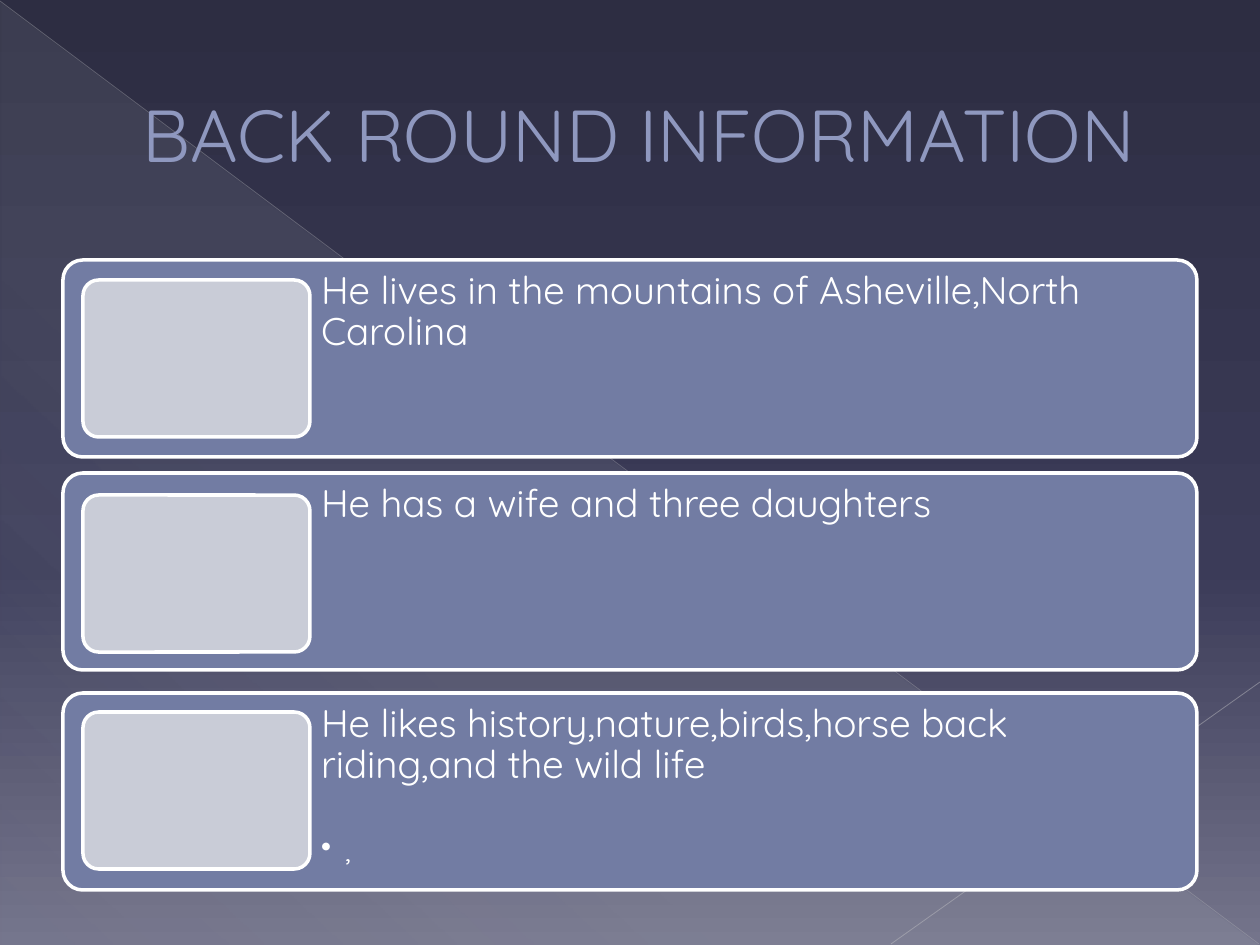
from lxml import etree
from pptx import Presentation
from pptx.dml.color import RGBColor
from pptx.enum.shapes import MSO_CONNECTOR, MSO_SHAPE
from pptx.enum.text import MSO_ANCHOR, PP_ALIGN
from pptx.oxml import parse_xml
from pptx.oxml.ns import nsdecls, qn
from pptx.util import Pt

PX = 914400 / 126
FONT = "Quicksand"
WHITE = RGBColor(0xFF, 0xFF, 0xFF)
TITLE = RGBColor(0x8F, 0x98, 0xBF)
TITLE_EDGE = RGBColor(0x4F, 0x56, 0x71)
CARD = RGBColor(0x72, 0x7C, 0xA3)
PANEL = RGBColor(0xC9, 0xCC, 0xD7)
RAY_LONG = RGBColor(0xB8, 0xB8, 0xBC)
RAY_SHORT = RGBColor(0xC0, 0xC0, 0xC4)
NIGHT, DUSK, HAZE = (RGBColor.from_string(c) for c in ("2D2D42", "3B3B58", "74748B"))
GLOW = RGBColor(0xDD, 0xE9, 0xEC)

# Card top, panel top, text, bulleted text
CARDS = [
    (260, 280, "He lives in the mountains of Asheville,North Carolina", None),
    (473, 495, "He has a wife and three daughters", None),
    (693, 712, "He likes history,nature,birds,horse back riding,and the wild life", ","),
]


def px(*lengths):
    return [round(n * PX) for n in lengths]


def gradient(stops, angle):
    """Gradient fill from (position %, colour, opacity %) stops."""
    gs = "".join(
        f'<a:gs pos="{pos * 1000}"><a:srgbClr val="{color}">'
        f'<a:alpha val="{alpha * 1000}"/></a:srgbClr></a:gs>'
        for pos, color, alpha in stops)
    return parse_xml(f'<a:gradFill {nsdecls("a")} rotWithShape="1"><a:gsLst>{gs}</a:gsLst>'
                     f'<a:lin ang="{angle * 60000}" scaled="0"/></a:gradFill>')


def replace_gradient(fill, parent, stops, angle):
    fill.gradient()
    old = parent.find(qn("a:gradFill"))
    parent.replace(old, gradient(stops, angle))


def add_ray(s, ends, color, width, alpha):
    line = s.shapes.add_connector(MSO_CONNECTOR.STRAIGHT, *px(*ends))
    line.line.color.rgb = color
    line.line.width = Pt(width)
    sp_pr = line.element.spPr
    clr = sp_pr.find(".//" + qn("a:srgbClr"))
    etree.SubElement(clr, qn("a:alpha")).set("val", str(alpha * 1000))
    etree.SubElement(sp_pr, qn("a:effectLst"))


def add_backdrop(s):
    fill = s.background.fill
    fill.gradient()
    bg_pr = s.element.find(".//" + qn("p:bgPr"))
    replace_gradient(fill, bg_pr, [(0, NIGHT, 100), (60, DUSK, 100), (100, HAZE, 100)], 90)

    glow = s.shapes.add_shape(MSO_SHAPE.RIGHT_TRIANGLE, *px(1, 2, 1258, 943))
    glow.shadow.inherit = False
    glow.line.fill.background()
    replace_gradient(glow.fill, glow.element.spPr,
                     [(0, GLOW, 10), (70, GLOW, 8), (100, GLOW, 1)], 133)
    add_ray(s, (0, 1, 1259, 944), RAY_LONG, 0.39, 35)
    add_ray(s, (1260, 682, 891, 944), RAY_SHORT, 0.47, 45)


def set_title(s, text):
    title = s.shapes.title
    title.left, title.top, title.width, title.height = px(63, 37, 1134, 193)
    s.shapes.element.append(title.element)  # in front of the backdrop
    tf = title.text_frame
    tf.text = text
    tf.vertical_anchor = MSO_ANCHOR.MIDDLE
    p = tf.paragraphs[0]
    p.alignment = PP_ALIGN.LEFT
    p._p.get_or_add_pPr().set("marL", str(px(67)[0]))
    r = p.runs[0]
    r.font.name, r.font.size = FONT, Pt(42)
    r.font.color.rgb = TITLE
    r._r.get_or_add_rPr().insert(0, parse_xml(
        f'<a:ln {nsdecls("a")} w="{Pt(0.5)}"><a:solidFill>'
        f'<a:srgbClr val="{TITLE_EDGE}"/></a:solidFill></a:ln>'))


def add_rounded(s, box, color):
    sp = s.shapes.add_shape(MSO_SHAPE.ROUNDED_RECTANGLE, *px(*box))
    sp.adjustments[0] = 0.1
    sp.shadow.inherit = False
    sp.fill.solid()
    sp.fill.fore_color.rgb = color
    sp.line.color.rgb = WHITE
    sp.line.width = Pt(2)


def style_paragraph(p, size):
    p.font.name, p.font.size = FONT, Pt(size)
    p.font.color.rgb = WHITE
    p.line_spacing = 0.9


def add_card_text(s, box, text, bullet):
    tf = s.shapes.add_textbox(*px(*box)).text_frame
    tf.word_wrap = True
    tf.margin_left = tf.margin_right = tf.margin_top = tf.margin_bottom = px(11)[0]
    tf.text = text
    style_paragraph(tf.paragraphs[0], 22)
    if bullet:
        p = tf.add_paragraph()
        p.text = bullet
        style_paragraph(p, 17)
        p.space_before = Pt(28)
        p_pr = p._p.get_or_add_pPr()
        indent = px(24)[0]
        p_pr.set("marL", str(indent))
        p_pr.set("indent", str(-indent))
        mark = parse_xml(f'<a:buChar {nsdecls("a")} char="•"/>')
        p_pr.find(qn("a:defRPr")).addprevious(mark)


def add_card(s, top, panel_top, text, bullet):
    add_rounded(s, (63, top, 1134, 197), CARD)
    add_card_text(s, (310, top, 887, 197), text, bullet)
    add_rounded(s, (83, panel_top, 227, 157), PANEL)


def main():
    prs = Presentation()
    prs.slide_width, prs.slide_height = px(1260, 945)
    s = prs.slides.add_slide(prs.slide_layouts[5])
    add_backdrop(s)
    set_title(s, "BACK ROUND INFORMATION")
    for card in CARDS:
        add_card(s, *card)
    prs.save("out.pptx")


if __name__ == "__main__":
    main()
